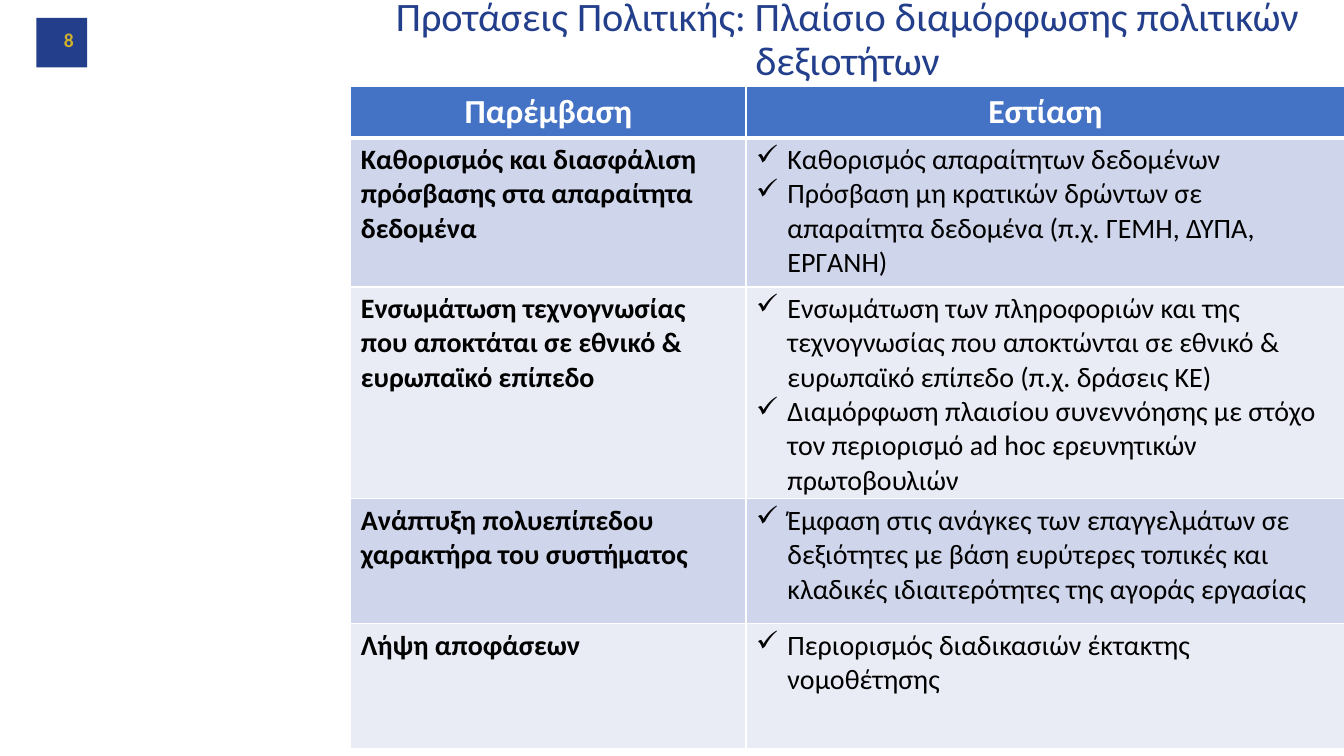
import pptx
import pptx.dml.color
import pptx.enum.shapes
import pptx.enum.text
import pptx.oxml.ns
import pptx.util
from lxml import etree

Cm, Pt = pptx.util.Cm, pptx.util.Pt
RGBColor = pptx.dml.color.RGBColor
ALIGN = pptx.enum.text.PP_ALIGN
MIDDLE = pptx.enum.text.MSO_ANCHOR.MIDDLE
qn = pptx.oxml.ns.qn

NAVY = RGBColor(0x23, 0x3F, 0x8C)
GOLD = RGBColor(0xCE, 0xB0, 0x2C)
BLUE = RGBColor(0x44, 0x72, 0xC4)
BAND_DARK = RGBColor(0xCF, 0xD5, 0xEA)
BAND_LIGHT = RGBColor(0xE9, 0xEB, 0xF5)
WHITE = RGBColor(0xFF, 0xFF, 0xFF)
BLACK = RGBColor(0, 0, 0)

TITLE = "Προτάσεις Πολιτικής: Πλαίσιο διαμόρφωσης πολιτικών δεξιοτήτων"
HEADINGS = ["Παρέμβαση", "Εστίαση"]
INTERVENTIONS = [
    ("Καθορισμός και διασφάλιση πρόσβασης στα απαραίτητα δεδομένα",
     ["Καθορισμός απαραίτητων δεδομένων",
      "Πρόσβαση μη κρατικών δρώντων σε απαραίτητα δεδομένα "
      "(π.χ. ΓΕΜΗ, ΔΥΠΑ, ΕΡΓΑΝΗ)"]),
    ("Ενσωμάτωση τεχνογνωσίας που αποκτάται σε εθνικό & ευρωπαϊκό επίπεδο",
     ["Ενσωμάτωση των πληροφοριών και της τεχνογνωσίας που αποκτώνται σε "
      "εθνικό & ευρωπαϊκό επίπεδο (π.χ. δράσεις ΚΕ)",
      "Διαμόρφωση πλαισίου συνεννόησης με στόχο τον περιορισμό ad hoc "
      "ερευνητικών πρωτοβουλιών"]),
    ("Ανάπτυξη πολυεπίπεδου χαρακτήρα του συστήματος",
     ["Έμφαση στις ανάγκες των επαγγελμάτων σε δεξιότητες με βάση ευρύτερες "
      "τοπικές και κλαδικές ιδιαιτερότητες της αγοράς εργασίας"]),
    ("Λήψη αποφάσεων",
     ["Περιορισμός διαδικασιών έκτακτης νομοθέτησης"]),
]
COLUMN_WIDTHS = [9.96, 15.09]
ROW_HEIGHTS = [1.3, 3.76, 3.58, 3.15, 3.15]


class SlideBuilder:
    font_name = "Calibri"
    bullet_indent = Cm(0.79)

    def __init__(self, slide):
        self.slide = slide

    def add_lines(self, frame, lines, size, color, bold=False,
                  align=ALIGN.LEFT, bullet=None, spacing=None):
        for index, line in enumerate(lines):
            paragraph = frame.add_paragraph() if index else frame.paragraphs[0]
            paragraph.alignment = align
            if spacing:
                paragraph.line_spacing = spacing
            if bullet:
                properties = paragraph._p.get_or_add_pPr()
                properties.set("marL", str(self.bullet_indent))
                properties.set("indent", str(-self.bullet_indent))
                etree.SubElement(properties, qn("a:buChar"), char=bullet)
            run = paragraph.add_run()
            run.text = line
            style = {"name": self.font_name, "size": Pt(size), "bold": bold}
            for key, value in style.items():
                setattr(run.font, key, value)
            run.font.color.rgb = color

    def rectangle(self, left, top, width, height, fill):
        shape = self.slide.shapes.add_shape(
            pptx.enum.shapes.MSO_SHAPE.RECTANGLE,
            Cm(left), Cm(top), Cm(width), Cm(height))
        shape.shadow.inherit = False
        shape.fill.solid()
        shape.fill.fore_color.rgb = fill
        shape.line.fill.background()

    def text(self, left, top, width, height, line, **style):
        box = self.slide.shapes.add_textbox(
            Cm(left), Cm(top), Cm(width), Cm(height))
        frame = box.text_frame
        frame.word_wrap = True
        frame.vertical_anchor = MIDDLE
        self.add_lines(frame, [line], **style)

    def table(self, left, top, widths, heights):
        table = self.slide.shapes.add_table(
            len(heights), len(widths), Cm(left), Cm(top),
            Cm(sum(widths)), Cm(sum(heights))).table
        for column, width in zip(table.columns, widths):
            column.width = Cm(width)
        for row, height in zip(table.rows, heights):
            row.height = Cm(height)
        return table

    def cell(self, cell, lines, fill, bottom=1, **style):
        """Fill a cell with text, a background and white borders."""
        properties = cell._tc.get_or_add_tcPr()
        for side, width in {"L": 1, "R": 1, "T": 1, "B": bottom}.items():
            border = etree.SubElement(
                properties, qn(f"a:ln{side}"), w=str(Pt(width)))
            solid = etree.SubElement(border, qn("a:solidFill"))
            etree.SubElement(solid, qn("a:srgbClr"), val=str(WHITE))
        cell.fill.solid()
        cell.fill.fore_color.rgb = fill
        self.add_lines(cell.text_frame, lines, **style)


def main():
    deck = pptx.Presentation()
    deck.slide_width, deck.slide_height = Cm(33.87), Cm(19.05)
    builder = SlideBuilder(deck.slides.add_slide(deck.slide_layouts[6]))

    builder.rectangle(0.92, 0.45, 1.28, 1.25, NAVY)
    builder.text(0.99, 0.48, 1.12, 1.02, "8", size=14, color=GOLD,
                 bold=True, align=ALIGN.RIGHT)

    policies = builder.table(8.84, 2.17, COLUMN_WIDTHS, ROW_HEIGHTS)
    for column, heading in enumerate(HEADINGS):
        builder.cell(policies.cell(0, column), [heading], BLUE, bottom=3,
                     size=24, color=WHITE, bold=True, align=ALIGN.CENTER)
    for row, (intervention, focus) in enumerate(INTERVENTIONS, 1):
        band = BAND_DARK if row % 2 else BAND_LIGHT
        builder.cell(policies.cell(row, 0), [intervention], band,
                     size=20, color=BLACK, bold=True)
        builder.cell(policies.cell(row, 1), focus, band,
                     size=20, color=BLACK, bullet="✓")

    builder.text(8.84, 0.51, 25.04, 1.02, TITLE, size=28.8, color=NAVY,
                 align=ALIGN.CENTER, spacing=0.9)
    deck.save("out.pptx")


if __name__ == "__main__":
    main()
